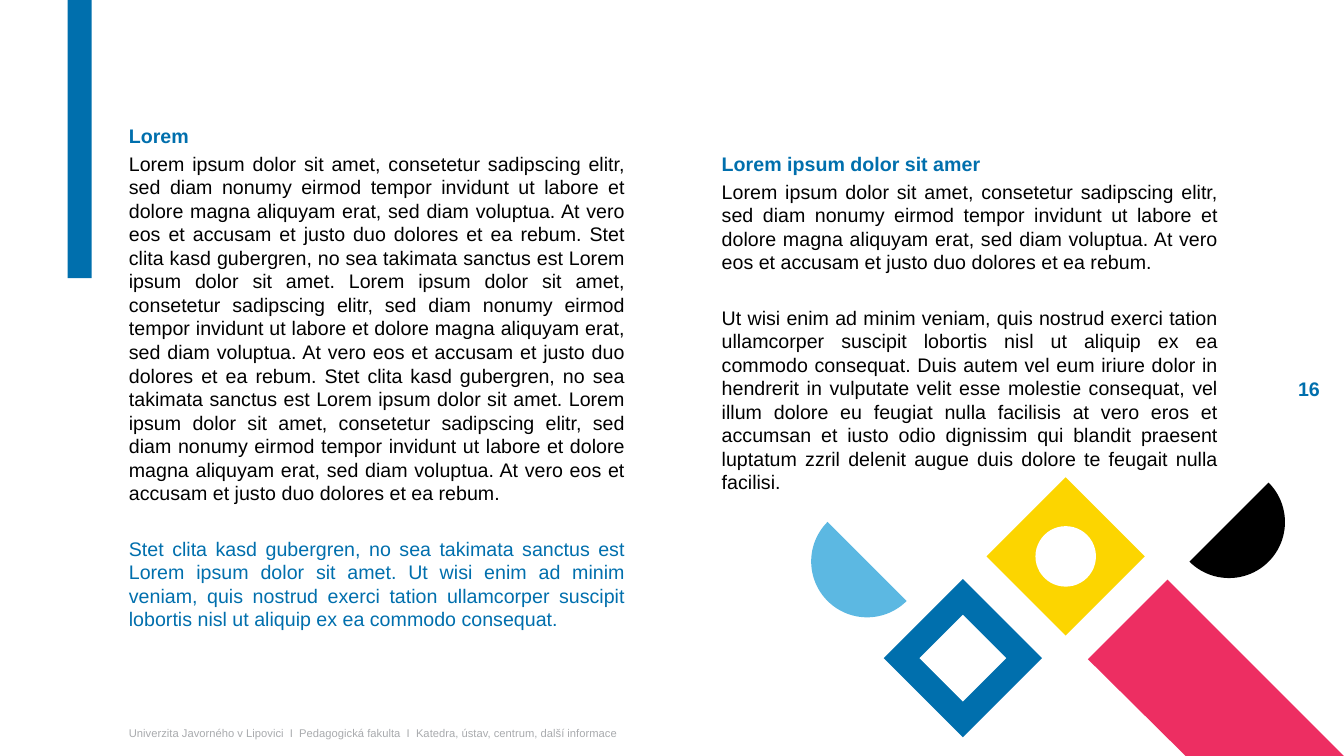
from dataclasses import dataclass

from lxml import etree
from pptx import Presentation
from pptx.dml.color import RGBColor
from pptx.enum.shapes import MSO_SHAPE as SHAPE
from pptx.enum.text import MSO_ANCHOR as ANCHOR, PP_ALIGN as ALIGN
from pptx.util import Inches, Pt


@dataclass(frozen=True)
class Theme:
    font: str = "Arial"
    body: float = 14
    small: float = 8
    leading: float = 16.8
    before: float = 3
    blue: str = "006FAD"
    sky: str = "5CB8E2"
    yellow: str = "FCD500"
    pink: str = "ED2E62"
    black: str = "000000"
    white: str = "FFFFFF"
    grey: str = "A9ABAE"


T = Theme()
BLANK_LINE = T.leading + T.before

OPENING = (
    "Lorem ipsum dolor sit amet, consetetur sadipscing elitr, sed diam nonumy "
    "eirmod tempor invidunt ut labore et dolore magna aliquyam erat, sed diam "
    "voluptua. At vero eos et accusam et justo duo dolores et ea rebum."
)
STET = (
    "Stet clita kasd gubergren, no sea takimata sanctus est "
    "Lorem ipsum dolor sit amet."
)
UT_WISI = (
    "Ut wisi enim ad minim veniam, quis nostrud exerci tation ullamcorper "
    "suscipit lobortis nisl ut aliquip ex ea commodo consequat."
)
DUIS = (
    "Duis autem vel eum iriure dolor in hendrerit in vulputate velit esse "
    "molestie consequat, vel illum dolore eu feugiat nulla facilisis at vero "
    "eros et accumsan et iusto odio dignissim qui blandit praesent luptatum "
    "zzril delenit augue duis dolore te feugait nulla facilisi."
)

# Paragraphs: text, colour, bold, space before
LEFT_COLUMN = [
    ("Lorem", T.blue, True, T.before),
    (" ".join([OPENING, STET, OPENING, STET, OPENING]), T.black, False, T.before),
    (f"{STET} {UT_WISI}", T.blue, False, T.before + BLANK_LINE),
]
RIGHT_COLUMN = [
    ("Lorem ipsum dolor sit amer", T.blue, True, T.before),
    (OPENING, T.black, False, T.before),
    (f"{UT_WISI} {DUIS}", T.black, False, T.before + BLANK_LINE),
]
FOOTER = ("Univerzita Javorného v Lipovici  I  Pedagogická fakulta  I  "
          "Katedra, ústav, centrum, další informace")
PAGE_NUMBER = "16"

# Ornament: preset, centre x, centre y, size, colour
TILES = [
    (SHAPE.DIAMOND, 10.57, 5.52, 1.57, T.yellow),
    (SHAPE.OVAL, 10.57, 5.52, 0.6, T.white),
    (SHAPE.DIAMOND, 9.55, 6.53, 1.57, T.blue),
    (SHAPE.DIAMOND, 9.55, 6.53, 0.86, T.white),
]
BAND = [(11.58, 5.75), (13.33, 7.5), (11.76, 7.5), (10.79, 6.54)]
# Half discs: centre x, centre y, rotation, colour
HALF_DISCS = [(12.19, 5.18, 315, T.black), (8.6, 5.57, 45, T.sky)]
HALF_DISC_SIZE = 1.11


def paint(sp, colour):
    sp.shadow.inherit = False
    sp.fill.solid()
    sp.fill.fore_color.rgb = RGBColor.from_string(colour)
    sp.line.fill.background()
    return sp


def add_centred(slide, preset, cx, cy, size, colour):
    sp = slide.shapes.add_shape(preset, Inches(cx - size / 2), Inches(cy - size / 2),
                                Inches(size), Inches(size))
    return paint(sp, colour)


def add_text(slide, paragraphs, box, *, size=T.body, align=ALIGN.LEFT,
             anchor=ANCHOR.MIDDLE, wrap=True, leading=None, top_gap=0):
    """Write (text, colour, bold, space before) paragraphs; top_gap is in points."""
    tf = slide.shapes.add_textbox(*map(Inches, box)).text_frame
    tf.word_wrap = wrap
    tf.vertical_anchor = anchor
    tf.margin_top = Inches(0.05) + Pt(top_gap)
    for i, (content, colour, bold, before) in enumerate(paragraphs):
        p = tf.add_paragraph() if i else tf.paragraphs[0]
        p.alignment = align
        p.space_before = Pt(before)
        if leading:
            p.line_spacing = Pt(leading)
        r = p.add_run()
        r.text = content
        r.font.name = T.font
        r.font.size = Pt(size)
        r.font.bold = bold
        r.font.color.rgb = RGBColor.from_string(colour)


def add_ornament(slide):
    for tile in TILES:
        add_centred(slide, *tile)

    points = [(Inches(x), Inches(y)) for x, y in BAND]
    builder = slide.shapes.build_freeform(*points[0])
    builder.add_line_segments(points[1:], close=True)
    paint(builder.convert_to_shape(), T.pink)

    for cx, cy, rotation, colour in HALF_DISCS:
        sp = add_centred(slide, SHAPE.PIE, cx, cy, HALF_DISC_SIZE, colour)
        sp.adjustments[0] = 0
        sp.adjustments[1] = 108
        sp.rotation = rotation


def main():
    prs = Presentation()
    prs.slide_width, prs.slide_height = Inches(13.33), Inches(7.5)
    slide = prs.slides.add_slide(prs.slide_layouts[6])

    add_ornament(slide)
    add_text(slide, [(FOOTER, T.grey, False, 0)], (1.18, 7.15, 5.49, 0.24), size=T.small)
    add_text(slide, [(PAGE_NUMBER, T.blue, True, 0)], (12.75, 3.69, 0.44, 0.34),
             align=ALIGN.RIGHT, wrap=False)

    column = dict(align=ALIGN.JUSTIFY, anchor=ANCHOR.TOP, leading=T.leading)
    add_text(slide, RIGHT_COLUMN, (7.06, 1.18, 5.12, 3.8), top_gap=BLANK_LINE, **column)
    add_text(slide, LEFT_COLUMN, (1.18, 1.18, 5.12, 5.45), **column)

    bar = slide.shapes.add_shape(SHAPE.RECTANGLE, Inches(0.67), 0, Inches(0.24), Inches(2.76))
    paint(bar, T.blue)
    prs.save("out.pptx")


if __name__ == "__main__":
    main()
